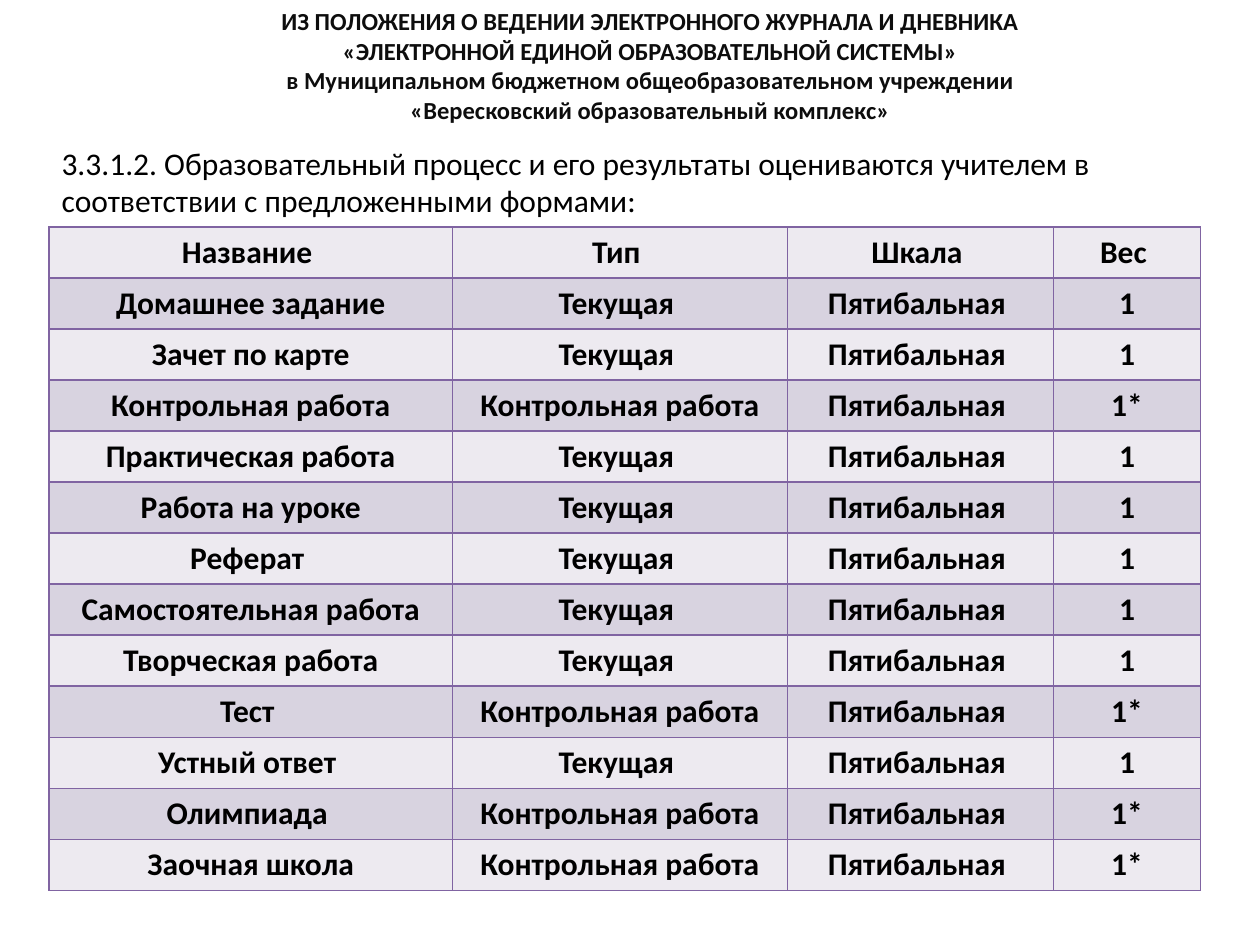
from typing import NamedTuple

from lxml import etree
from pptx import Presentation
from pptx.dml.color import RGBColor
from pptx.enum.text import MSO_ANCHOR, MSO_AUTO_SIZE, PP_ALIGN
from pptx.oxml.ns import qn
from pptx.util import Inches, Pt

CENTER, LEFT = PP_ALIGN.CENTER, PP_ALIGN.LEFT
TOP, MIDDLE = MSO_ANCHOR.TOP, MSO_ANCHOR.MIDDLE
FIT_SHAPE = MSO_AUTO_SIZE.SHAPE_TO_FIT_TEXT

FONT = "Calibri"
BLACK = RGBColor(0x00, 0x00, 0x00)
TITLE_COLOR = RGBColor(0x0D, 0x0D, 0x0D)
BORDER_COLOR = RGBColor(0x80, 0x64, 0xA2)
BAND_FILLS = (RGBColor(0xED, 0xEA, 0xF0), RGBColor(0xD8, 0xD3, 0xE0))
TITLE_ONLY = 5


class Style(NamedTuple):
    size: int
    color: RGBColor
    bold: bool
    align: PP_ALIGN


class Work(NamedTuple):
    name: str
    kind: str
    scale: str
    weight: str


TITLE_STYLE = Style(14, TITLE_COLOR, True, CENTER)
INTRO_STYLE = Style(18, BLACK, False, LEFT)
CELL_STYLE = Style(18, BLACK, True, CENTER)

TITLE_LINES = (
    "ИЗ ПОЛОЖЕНИЯ О ВЕДЕНИИ ЭЛЕКТРОННОГО ЖУРНАЛА И ДНЕВНИКА",
    "«ЭЛЕКТРОННОЙ ЕДИНОЙ ОБРАЗОВАТЕЛЬНОЙ СИСТЕМЫ»",
    "в Муниципальном бюджетном общеобразовательном учреждении",
    "«Вересковский образовательный комплекс»",
)
INTRO = (
    "3.3.1.2. Образовательный процесс и его результаты оцениваются учителем в "
    "соответствии с предложенными формами:"
)


def current(name: str) -> Work:
    return Work(name, "Текущая ", "Пятибальная ", "1")


def control(name: str) -> Work:
    return Work(name, "Контрольная работа", "Пятибальная ", "1*")


WORKS = (
    Work("Название ", "Тип ", "Шкала ", "Вес "),
    current("Домашнее задание"),
    current("Зачет по карте"),
    control("Контрольная работа"),
    current("Практическая работа"),
    current("Работа на уроке"),
    current("Реферат "),
    current("Самостоятельная работа"),
    current("Творческая работа"),
    control("Тест "),
    current("Устный ответ "),
    control("Олимпиада "),
    control("Заочная школа"),
)
COLUMN_WIDTHS = (3.2, 2.66, 2.11, 1.17)


def write_lines(frame, lines: tuple[str, ...], style: Style) -> None:
    for index, line in enumerate(lines):
        paragraph = frame.add_paragraph() if index else frame.paragraphs[0]
        paragraph.alignment = style.align
        run = paragraph.add_run()
        run.text = line
        run.font.name = FONT
        run.font.size = Pt(style.size)
        run.font.bold = style.bold
        run.font.color.rgb = style.color


def add_borders(cell) -> None:
    """Outline all four sides; borders must precede the fill in tcPr."""
    properties = cell._tc.get_or_add_tcPr()
    for position, side in enumerate(("a:lnL", "a:lnR", "a:lnT", "a:lnB")):
        line = etree.Element(qn(side), w=str(Pt(1)))
        fill = etree.SubElement(line, qn("a:solidFill"))
        etree.SubElement(fill, qn("a:srgbClr"), val=str(BORDER_COLOR))
        properties.insert(position, line)


def add_title(slide) -> None:
    title = slide.shapes.title
    title.left, title.top = Inches(0.94), Inches(0)
    title.width, title.height = Inches(8.44), Inches(1.04)
    frame = title.text_frame
    frame.word_wrap = True
    frame.auto_size = FIT_SHAPE
    frame.vertical_anchor = TOP
    write_lines(frame, TITLE_LINES, TITLE_STYLE)


def add_intro(slide) -> None:
    intro = slide.shapes.add_textbox(Inches(0.39), Inches(1.09), Inches(9.06), Inches(1.01))
    intro.text_frame.word_wrap = True
    intro.text_frame.auto_size = FIT_SHAPE
    write_lines(intro.text_frame, (INTRO,), INTRO_STYLE)


def add_works_table(slide) -> None:
    table = slide.shapes.add_table(
        len(WORKS), len(COLUMN_WIDTHS),
        Inches(0.39), Inches(1.8), Inches(sum(COLUMN_WIDTHS)), Inches(5.27),
    ).table
    for column, width in zip(table.columns, COLUMN_WIDTHS):
        column.width = Inches(width)
    for row_index, (row, work) in enumerate(zip(table.rows, WORKS)):
        for cell, value in zip(row.cells, work):
            cell.fill.solid()
            cell.fill.fore_color.rgb = BAND_FILLS[row_index % 2]
            cell.vertical_anchor = MIDDLE
            add_borders(cell)
            write_lines(cell.text_frame, (value,), CELL_STYLE)


def main() -> None:
    presentation = Presentation()
    presentation.slide_width, presentation.slide_height = Inches(10), Inches(7.5)
    slide = presentation.slides.add_slide(presentation.slide_layouts[TITLE_ONLY])
    add_title(slide)
    add_intro(slide)
    add_works_table(slide)
    presentation.save("out.pptx")


if __name__ == "__main__":
    main()
